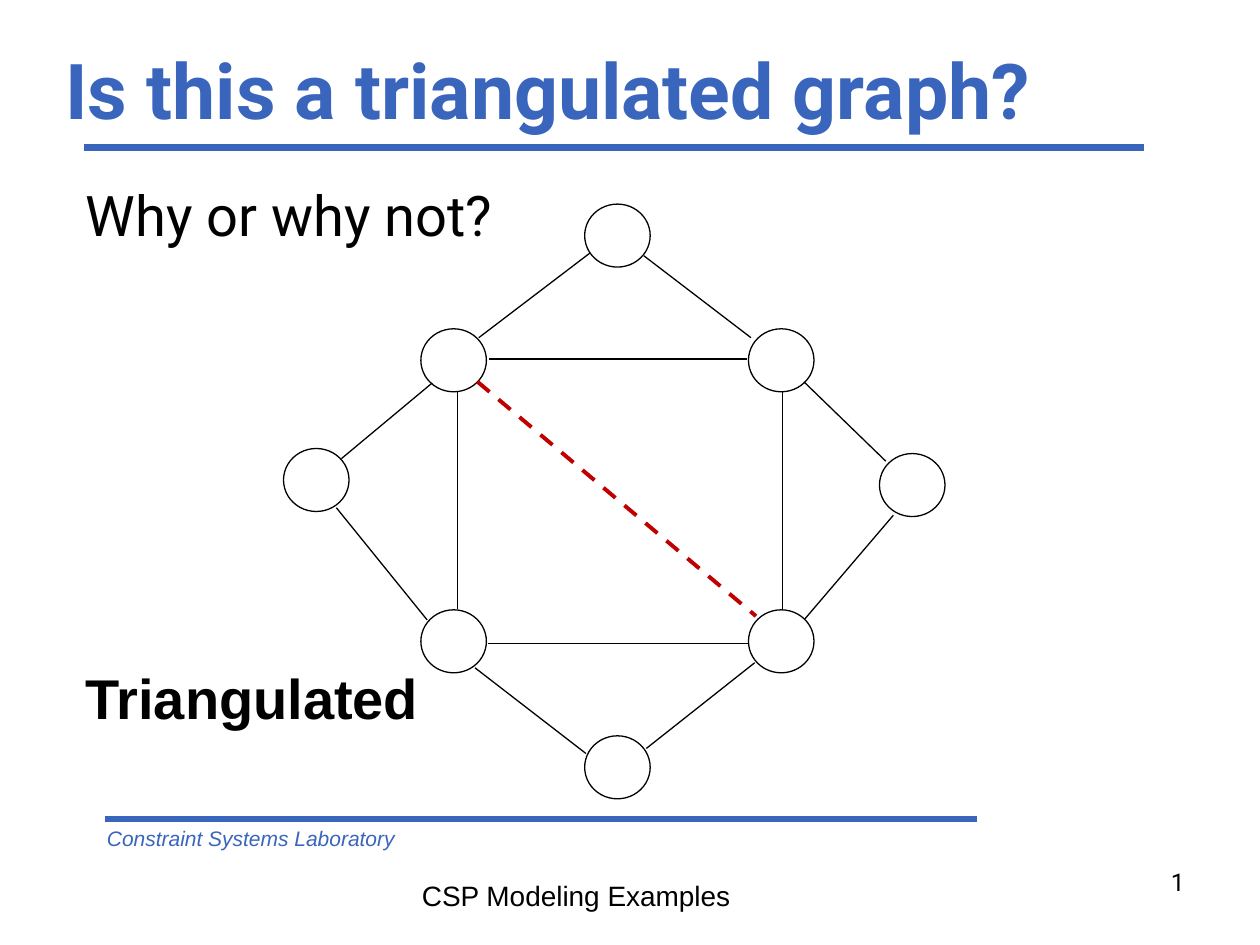
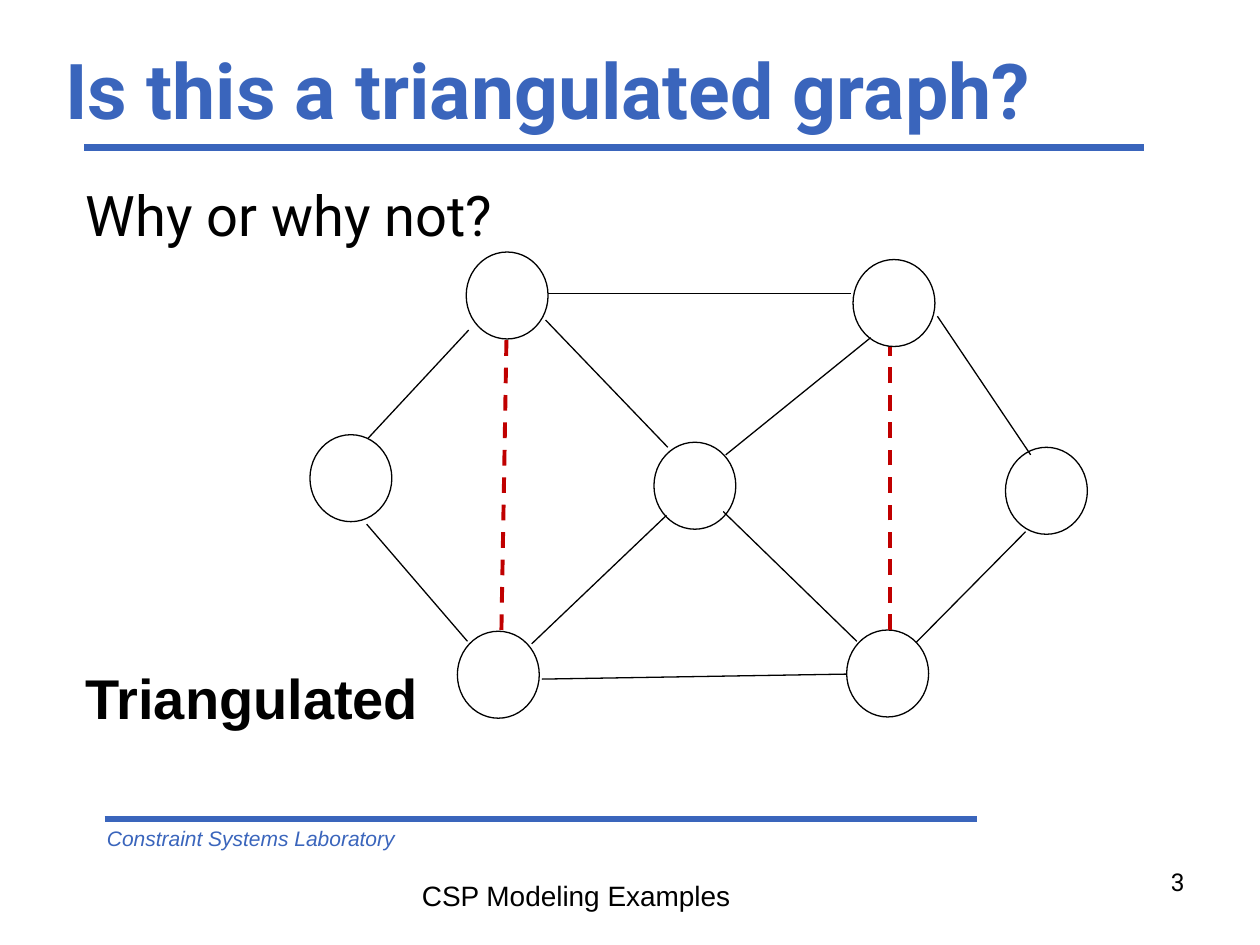
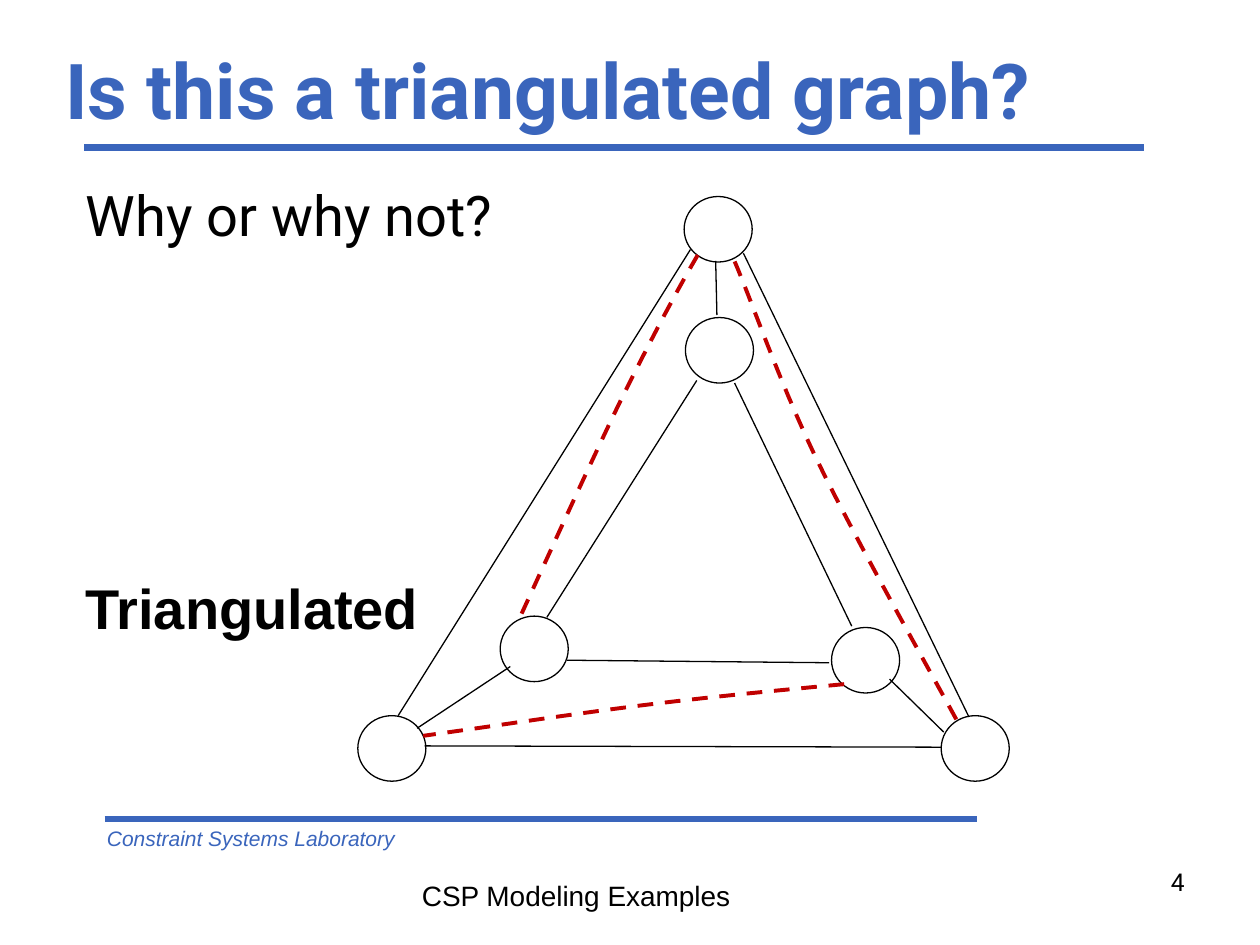
from lxml.etree import SubElement
from pptx import Presentation
from pptx.dml.color import RGBColor
from pptx.enum.dml import MSO_LINE_DASH_STYLE as Dash
from pptx.enum.shapes import MSO_CONNECTOR as Connector, MSO_SHAPE as Shape
from pptx.enum.text import MSO_ANCHOR as Anchor, MSO_AUTO_SIZE as AutoSize, PP_ALIGN as Align
from pptx.oxml.ns import qn
from pptx.util import Inches, Pt

BLUE = RGBColor(0x3A, 0x65, 0xBC)
BLACK = RGBColor(0, 0, 0)
RED = RGBColor(0xC0, 0, 0)

EDGE = dict(color=BLACK, width=Pt(0.75))
RULE = dict(color=BLUE, width=Pt(4))
CHORD = dict(color=RED, width=Pt(2.25), dash_style=Dash.DASH)

TITLE = dict(name="Roboto", size=Pt(44), bold=True, color=BLUE)
QUESTION = dict(name="Roboto", size=Pt(32), color=BLACK)
VERDICT = dict(name="Arial", size=Pt(32), bold=True, color=BLACK)
LABORATORY = dict(name="Arial", size=Pt(12), italic=True, color=BLUE)
TOPIC = dict(name="Arial", size=Pt(16), color=BLACK)
NUMBER = dict(name="Roboto", size=Pt(14), color=BLACK)

CURVE_STEPS = 12

GRAPHS = [
    dict(
        number="1", verdict_top=5.22, node_size=(0.52, 0.5), turn=0,
        nodes=[(4.64, 1.62), (5.94, 2.61), (3.34, 2.61), (3.34, 4.84),
               (5.94, 4.84), (6.98, 3.6), (4.64, 5.84), (2.25, 3.56)],
        edges=[(2.71, 3.64, 3.43, 3.04), (2.67, 4.03, 3.39, 4.92),
               (3.77, 5.3, 4.65, 5.98), (5.13, 5.94, 5.99, 5.26),
               (6.39, 4.91, 7.09, 4.09), (6.38, 3.03, 7.03, 3.66),
               (3.8, 2.68, 4.68, 2.01), (5.11, 2.03, 5.96, 2.68),
               (3.63, 4.83, 3.63, 3.1), (3.87, 5.11, 5.94, 5.11),
               (6.21, 4.83, 6.21, 3.1), (5.93, 2.85, 3.88, 2.85)],
        chords=[(3.79, 3.03, 6, 4.89)],
        curves=[],
    ),
    dict(
        number="3", verdict_top=5.22, node_size=(0.69, 0.65), turn=270,
        nodes=[(2.44, 3.47), (5.17, 3.53), (6.75, 2.08), (3.68, 2.02),
               (6.7, 5.02), (3.61, 5.03), (7.96, 3.57)],
        edges=[(3.71, 5.09, 2.91, 4.16), (7.27, 5.1, 8.14, 4.22),
               (8.18, 3.61, 7.44, 2.51), (4.35, 2.33, 6.75, 2.33),
               (2.92, 3.48, 3.72, 2.62), (6.91, 2.68, 5.76, 3.61),
               (5.29, 4.09, 4.22, 5.11), (4.33, 2.54, 5.3, 3.55),
               (6.72, 5.35, 4.3, 5.39), (6.8, 5.09, 5.74, 4.06)],
        chords=[(7.06, 5, 7.06, 2.75)],
        curves=[[(4.02, 2.7), (4.02, 2.7), (4, 3.85), (3.98, 5)]],
    ),
    dict(
        number="4", verdict_top=4.5, node_size=(0.54, 0.52), turn=0,
        nodes=[(5.43, 1.56), (6.6, 4.98), (3.97, 4.89), (5.44, 2.52),
               (7.47, 5.68), (2.84, 5.68)],
        edges=[(4.34, 4.9, 5.53, 3.02), (3.37, 5.92, 7.47, 5.93),
               (3.31, 5.78, 4.05, 5.29), (5.9, 2.01, 7.69, 5.69),
               (5.68, 2.07, 5.69, 2.5), (6.76, 4.97, 5.83, 3.04),
               (7.49, 5.81, 7.06, 5.39), (3.16, 5.68, 5.48, 1.98),
               (4.5, 5.24, 6.58, 5.26)],
        chords=[],
        curves=[
            [(4.14, 4.87), (4.43, 4.24), (4.72, 3.6), (4.95, 3.13),
             (5.19, 2.65), (5.36, 2.33), (5.54, 2.02)],
            [(6.7, 5.43), (6.17, 5.48), (5.64, 5.53), (5.08, 5.6),
             (4.52, 5.67), (3.94, 5.76), (3.36, 5.84)],
            [(7.59, 5.71), (7.4, 5.36), (6.75, 4.21), (6.46, 3.6),
             (6.17, 2.99), (5.96, 2.37), (5.82, 2.05)],
        ],
    ),
]


def apply_style(target, style):
    for name, value in style.items():
        if name == "color":
            target.fill.solid()
            target.fill.fore_color.rgb = value
        else:
            setattr(target, name, value)


def curve_points(anchors):
    points = [anchors[0]]
    for first in range(0, len(anchors) - 1, 3):
        segment = anchors[first:first + 4]
        for step in range(1, CURVE_STEPS + 1):
            t = step / CURVE_STEPS
            weights = ((1 - t) ** 3, 3 * t * (1 - t) ** 2, 3 * t * t * (1 - t), t ** 3)
            points.append(tuple(sum(w * point[axis] for w, point in zip(weights, segment))
                                for axis in (0, 1)))
    return [(Inches(x), Inches(y)) for x, y in points]


class GraphDeck:
    def __init__(self):
        self.deck = Presentation()
        self.deck.slide_width = Inches(10)
        self.deck.slide_height = Inches(7.5)
        self.page = None

    def new_page(self, title, number):
        self.page = self.deck.slides.add_slide(self.deck.slide_layouts[5])
        self.line((0.67, 1.17, 9.08, 1.17), RULE)
        self.line((0.83, 6.5, 7.75, 6.5), RULE)
        self.text("Constraint Systems Laboratory", (0.75, 6.5, 5.25, 0.3), LABORATORY)
        self.text("CSP Modeling Examples", (3.25, 6.92, 3.58, 0.37), TOPIC)
        self.text(number, (7.17, 6.83, 2.33, 0.52), NUMBER, Align.RIGHT)
        box = self.page.shapes.title
        box.left, box.top, box.width, box.height = map(Inches, (0.42, 0.33, 9, 0.75))
        self.fill_text(box, title, TITLE, Align.LEFT, Anchor.MIDDLE)

    def fill_text(self, box, words, style, align, anchor):
        frame = box.text_frame
        frame.word_wrap = True
        frame.auto_size = AutoSize.NONE
        frame.vertical_anchor = anchor
        para = frame.paragraphs[0]
        para.alignment = align
        span = para.add_run()
        span.text = words
        apply_style(span.font, style)

    def text(self, words, place, style, align=Align.LEFT):
        box = self.page.shapes.add_textbox(*map(Inches, place))
        self.fill_text(box, words, style, align, Anchor.TOP)

    def line(self, ends, style):
        line = self.page.shapes.add_connector(Connector.STRAIGHT, *map(Inches, ends))
        SubElement(line._element.spPr, qn("a:effectLst"))
        self.stroke(line, style)

    def stroke(self, shape, style):
        apply_style(shape.line, style)

    def node(self, corner, size, turn):
        node = self.page.shapes.add_shape(Shape.OVAL, *map(Inches, corner + size))
        node.rotation = turn
        node.shadow.inherit = False
        node.fill.background()
        self.stroke(node, EDGE)

    def curve(self, anchors, style):
        start, *rest = curve_points(anchors)
        builder = self.page.shapes.build_freeform(*start)
        builder.add_line_segments(rest, close=False)
        curve = builder.convert_to_shape()
        curve.shadow.inherit = False
        curve.fill.background()
        self.stroke(curve, style)

    def graph(self, graph):
        for corner in graph["nodes"]:
            self.node(corner, graph["node_size"], graph["turn"])
        for ends in graph["edges"]:
            self.line(ends, EDGE)
        for ends in graph["chords"]:
            self.line(ends, CHORD)
        for anchors in graph["curves"]:
            self.curve(anchors, CHORD)


def main():
    show = GraphDeck()
    for graph in GRAPHS:
        show.new_page("Is this a triangulated graph?", graph["number"])
        show.text("Why or why not?", (0.58, 1.38, 8.92, 4.95), QUESTION)
        show.graph(graph)
        show.text("Triangulated", (0.58, graph["verdict_top"], 3.34, 0.64), VERDICT)
    show.deck.save("out.pptx")


if __name__ == "__main__":
    main()
